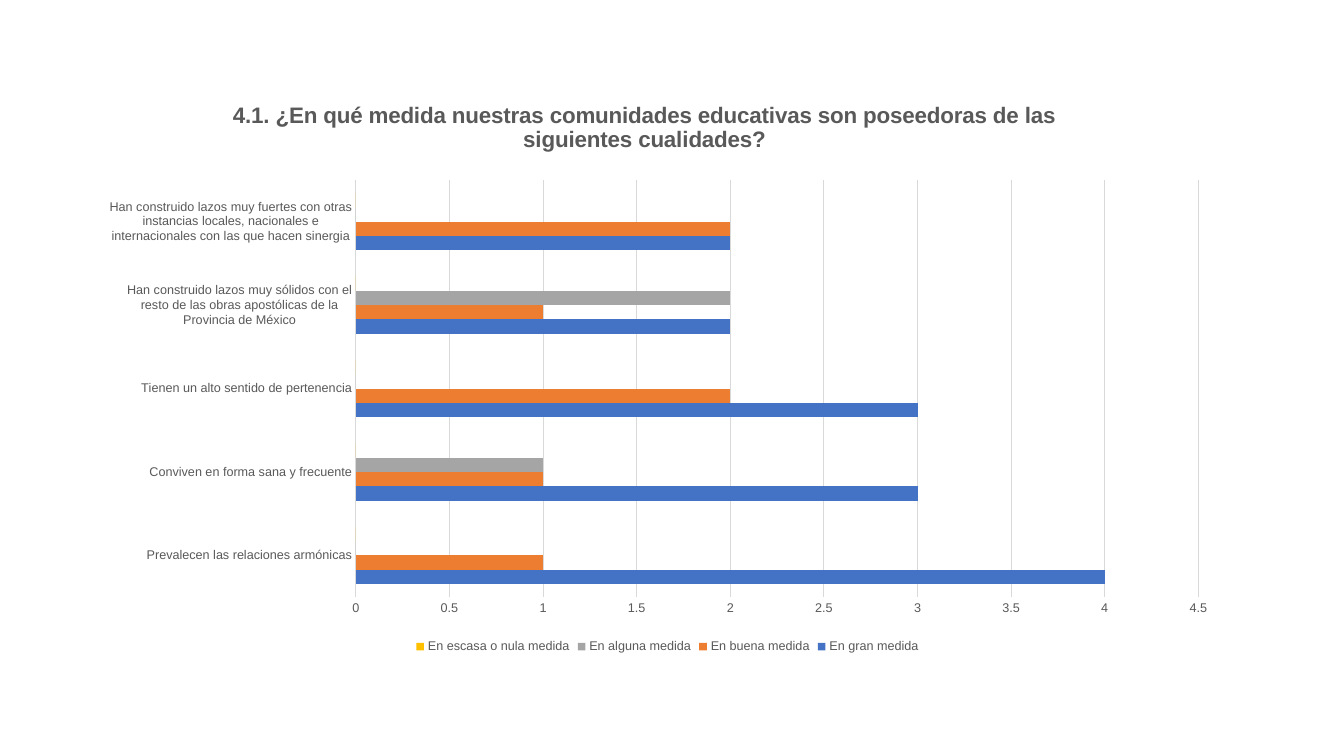
from lxml.etree import SubElement
from pptx import Presentation
from pptx.chart.data import CategoryChartData
from pptx.dml.color import RGBColor
from pptx.enum.chart import XL_CHART_TYPE, XL_LEGEND_POSITION, XL_TICK_MARK
from pptx.oxml.ns import qn
from pptx.util import Emu, Pt

EMU_PER_PX = 914400 / 100.8
COLORS = {
    "text": "595959",
    "line": "D9D9D9",
    "blue": "4472C4",
    "orange": "ED7D31",
    "gray": "A5A5A5",
    "yellow": "FFC000",
}
TITLE = ("4.1. ¿En qué medida nuestras comunidades educativas son poseedoras "
         "de las siguientes cualidades?")
QUALITIES = [
    "Prevalecen las relaciones armónicas",
    "Conviven en forma sana y frecuente",
    "Tienen un alto sentido de pertenencia",
    "Han construido lazos muy sólidos con el resto de las obras apostólicas "
    "de la Provincia de México",
    "Han construido lazos muy fuertes con otras instancias locales, nacionales "
    "e internacionales con las que hacen sinergia",
]
ANSWERS = [
    ("En gran medida", "blue", (4, 3, 3, 2, 2)),
    ("En buena medida", "orange", (1, 1, 2, 1, 2)),
    ("En alguna medida", "gray", (0, 1, 0, 2, 0)),
    ("En escasa o nula medida", "yellow", (0, 0, 0, 0, 0)),
]


def px(n):
    return Emu(round(n * EMU_PER_PX))


def place(element, **fractions):
    """Give a chart part a manual layout, in fractions of the chart's size."""
    layout = element.find(qn("c:layout"))
    if layout is None:
        layout = SubElement(element, qn("c:layout"))
        tx = element.find(qn("c:tx"))
        if tx is None:
            element.insert(0, layout)
        else:
            tx.addnext(layout)
    manual = SubElement(layout, qn("c:manualLayout"))
    if "w" in fractions:
        SubElement(manual, qn("c:layoutTarget")).set("val", "inner")
    for mode in ("xMode", "yMode"):
        SubElement(manual, qn(f"c:{mode}")).set("val", "edge")
    for name, value in fractions.items():
        SubElement(manual, qn(f"c:{name}")).set("val", str(value))


class SlideBuilder:
    def __init__(self, prs, font="Arial"):
        self.font = font
        self.slide = prs.slides.add_slide(prs.slide_layouts[6])

    def set_font(self, font, size, bold=False):
        font.name = self.font
        font.size = Pt(size)
        font.bold = bold
        font.color.rgb = RGBColor.from_string(COLORS["text"])

    def set_line(self, line):
        line.color.rgb = RGBColor.from_string(COLORS["line"])
        line.width = Pt(0.75)

    def bar_chart(self, x, y, w, h, categories, series):
        data = CategoryChartData()
        data.categories = categories
        for name, _, values in series:
            data.add_series(name, values)
        chart = self.slide.shapes.add_chart(
            XL_CHART_TYPE.BAR_CLUSTERED, px(x), px(y), px(w), px(h), data).chart
        self.set_font(chart.font, 10)
        plot = chart.plots[0]
        plot.gap_width = 182
        plot.vary_by_categories = False
        for s, (_, color, _) in zip(plot.series, series):
            s.format.fill.solid()
            s.format.fill.fore_color.rgb = RGBColor.from_string(COLORS[color])
        self.axes(chart)
        return chart

    def axes(self, chart):
        for axis in (chart.category_axis, chart.value_axis):
            axis.major_tick_mark = axis.minor_tick_mark = XL_TICK_MARK.NONE
            self.set_font(axis.tick_labels.font, 9)
        self.set_line(chart.category_axis.format.line)
        value_axis = chart.value_axis
        value_axis.minimum_scale, value_axis.maximum_scale = 0, 4.5
        value_axis.major_unit = 0.5
        value_axis.format.line.fill.background()
        self.set_line(value_axis.major_gridlines.format.line)

    def chart_title(self, chart, text):
        title = chart.chart_title
        title.include_in_layout = False
        p = title.text_frame.paragraphs[0]
        p.text = text
        self.set_font(p.font, 16, bold=True)
        place(title._element, x=0.11, y=0.01)

    def legend(self, chart):
        chart.has_legend = True
        chart.legend.position = XL_LEGEND_POSITION.BOTTOM
        chart.legend.include_in_layout = False
        self.set_font(chart.legend.font, 9)


def main():
    prs = Presentation()
    prs.slide_width, prs.slide_height = px(1344), px(756)
    s = SlideBuilder(prs)
    chart = s.bar_chart(105, 91, 1125, 567, QUALITIES, ANSWERS)
    s.chart_title(chart, TITLE)
    s.legend(chart)
    plot_area = chart._chartSpace.chart.plotArea
    place(plot_area, x=0.223, y=0.157, w=0.749, h=0.736)
    prs.save("out.pptx")


if __name__ == "__main__":
    main()
